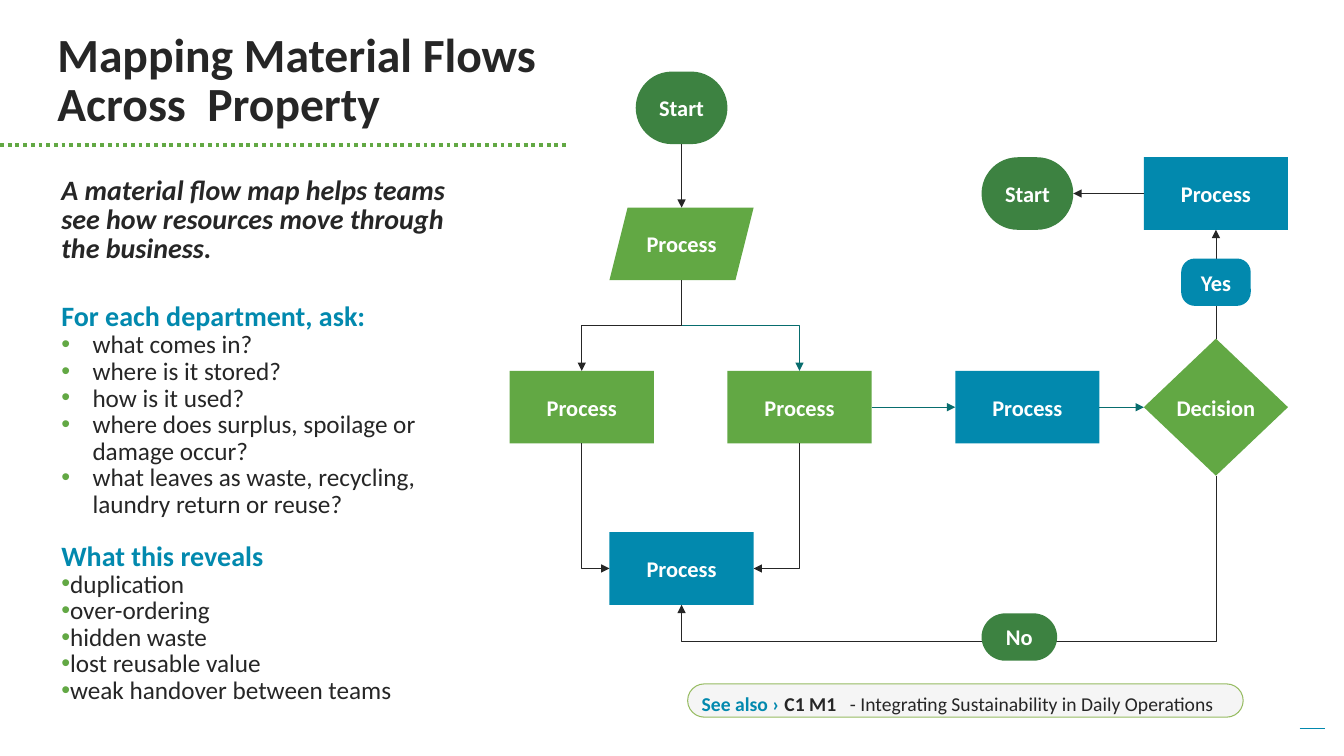
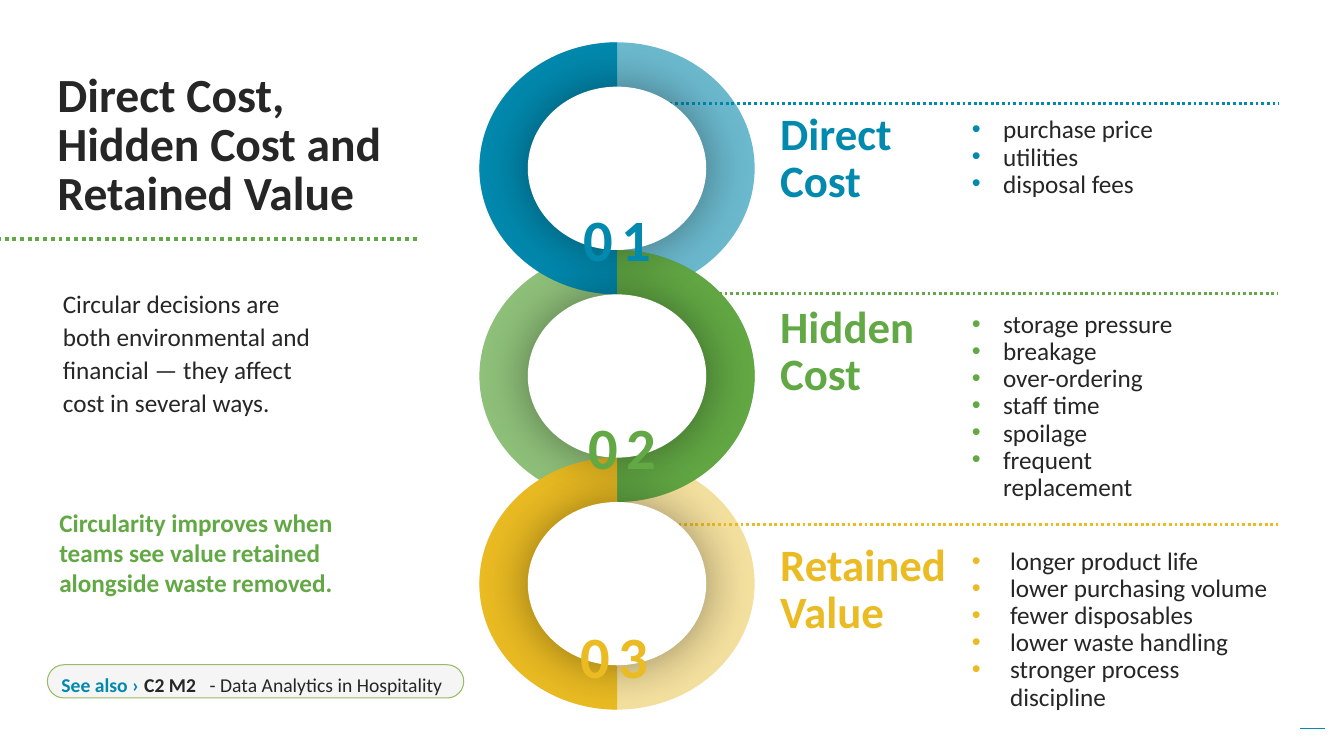
from pptx import Presentation
from pptx.dml.color import RGBColor
from pptx.enum.dml import MSO_LINE
from pptx.enum.shapes import MSO_CONNECTOR as CONN, MSO_SHAPE as SHAPE
from pptx.enum.text import MSO_ANCHOR as ANCHOR, MSO_AUTO_SIZE as AUTO, PP_ALIGN as ALIGN
from pptx.oxml.ns import qn
from pptx.util import Inches, Pt
from lxml.etree import SubElement

# Shared look
FONT = "Calibri"
INK, WHITE, BLUE, GREEN = "262626", "FFFFFF", "0289AE", "62A844"
DARK_GREEN, GOLD, TEAL = "3D8241", "EABB22", "086D6E"
PILL_FILL, PILL_LINE = "F5F5F5", "97BC62"

# Slide 1: text
FLOW_TITLE = "Mapping Material Flows Across  Property"
FLOW_INTRO = "A material flow map helps teams see how resources move through the business."
# heading, space before, heading line spacing, bullet margin, bullets
FLOW_LISTS = [
    ("For each department, ask:", 24.4, None, 0.31,
     ["what comes in?", "where is it stored?", "how is it used?",
      "where does surplus, spoilage or damage occur?",
      "what leaves as waste, recycling, laundry return or reuse?"]),
    ("What this reveals", 19, 19, 0,
     ["duplication", "over-ordering", "hidden waste", "lost reusable value",
      "weak handover between teams"]),
]

# Slide 1: flowchart columns, rows and node sizes
COL = {"left": 5.77, "stem": 6.76, "mid": 7.93, "no": 10.11, "right": 10.19, "end": 12.06}
ROW = {"start": 1.07, "finish": 1.92, "input": 2.42, "yes": 2.8, "work": 4.04,
       "merge": 5.64, "no": 6.32}
BOX, ROUND = (1.43, 0.72), (0.91, 0.72)
NO_LANE = 6.36
# name: shape, text, fill, column, row, size
NODES = {
    "start": (SHAPE.ROUNDED_RECTANGLE, "Start", DARK_GREEN, "stem", "start", ROUND),
    "decision": (SHAPE.FLOWCHART_DECISION, "Decision", GREEN, "end", "work", (1.43, 1.36)),
    "input": (SHAPE.PARALLELOGRAM, "Process", GREEN, "stem", "input", BOX),
    "left": (SHAPE.RECTANGLE, "Process", GREEN, "left", "work", BOX),
    "mid": (SHAPE.RECTANGLE, "Process", GREEN, "mid", "work", BOX),
    "merge": (SHAPE.RECTANGLE, "Process", BLUE, "stem", "merge", BOX),
    "right": (SHAPE.RECTANGLE, "Process", BLUE, "right", "work", BOX),
    "approved": (SHAPE.RECTANGLE, "Process", BLUE, "end", "finish", BOX),
    "finish": (SHAPE.ROUNDED_RECTANGLE, "Start", DARK_GREEN, "right", "finish", ROUND),
}
# from, side, to, side, colour (0 top, 1 left, 2 bottom, 3 right)
STRAIGHT = [
    ("start", 2, "input", 0, INK), ("mid", 3, "right", 1, TEAL),
    ("right", 3, "decision", 1, TEAL), ("approved", 1, "finish", 3, INK),
    ("decision", 0, "approved", 2, INK),
]
# from, to, side, colour, height of the crossing lane (None: single bend)
ELBOWS = [
    ("decision", "merge", 2, INK, NO_LANE), ("left", "merge", 1, INK, None),
    ("mid", "merge", 3, INK, None), ("input", "mid", 0, TEAL, 3.23),
    ("input", "left", 0, INK, 3.23),
]

# Slide 2: text and rings
COST_TITLE = "Direct Cost, Hidden Cost and Retained Value"
COST_INTRO = ("Circular decisions are both environmental and financial — "
              "they affect cost in several ways.")
COST_CLAIM = "Circularity improves when teams see value retained alongside waste removed."
RING_X, RING_Y, RING_STEP = 6.12, 1.67, 2.06
RING, HOLE = (2.73, 2.5), (1.77, 1.62)
ARC = 0.55  # Bezier handle length for a quarter ellipse
# heading, colour, tint %, solid side, number box, rule (x, y), heading (y, w),
# list (y, w, h), bullet margin, bullets
COSTS = [
    ("Direct Cost", BLUE, 58, -1, (5.24, 1.24, 1.76, 1.48), (6.64, 1.03), (1.06, 1.84),
     (1.11, 2.51, 1.17), 0.31, ["purchase price", "utilities", "disposal fees"]),
    ("Hidden Cost", GREEN, 71, 1, (5.29, 3.31, 1.77, 1.36), (6.74, 2.91), (2.98, 1.56),
     (3.04, 2.61, 2.23), 0.31,
     ["storage pressure", "breakage", "over-ordering", "staff time", "spoilage",
      "frequent replacement"]),
    ("Retained Value", GOLD, 43, -1, (5.24, 5.38, 1.7, 1.42), (6.45, 5.2), (5.34, 2.1),
     (5.39, 3.24, 1.97), 0.38,
     ["longer product life", "lower purchasing volume", "fewer disposables",
      "lower waste handling", "stronger process discipline"]),
]


# Helpers
def rgb(code):
    return RGBColor.from_string(code)


def add_run(p, text, size, color=INK, bold=False, italic=False):
    r = p.add_run()
    r.text = text
    f = r.font
    f.name, f.size, f.bold, f.italic = FONT, Pt(size), bold, italic
    f.color.rgb = rgb(color)
    return r


def next_paragraph(tf, spacing=None, before=0):
    p = tf.paragraphs[0]
    if p.runs:
        p = tf.add_paragraph()
    if spacing:
        p.line_spacing = spacing
    if before:
        p.space_before = Pt(before)
    return p


def add_bullets(tf, items, color, spacing, margin, hang):
    for item in items:
        p = next_paragraph(tf, Pt(spacing))
        pPr = p._p.get_or_add_pPr()
        pPr.set("marL", str(Inches(margin)))
        pPr.set("indent", str(-Inches(hang)))
        SubElement(SubElement(pPr, qn("a:buClr")), qn("a:srgbClr"), val=color)
        SubElement(pPr, qn("a:buFont"), typeface="Arial")
        SubElement(pPr, qn("a:buChar"), char="•")
        add_run(p, item, 18)


def add_box(s, x, y, w, h):
    tf = s.shapes.add_textbox(Inches(x), Inches(y), Inches(w), Inches(h)).text_frame
    tf.word_wrap = True
    return tf


def add_text(s, at, text, size, color=INK, bold=False, spacing=None):
    tf = add_box(s, *at)
    add_run(next_paragraph(tf, spacing), text, size, color, bold)
    return tf


def fill_plain(sp, color):
    sp.shadow.inherit = False
    sp.fill.solid()
    sp.fill.fore_color.rgb = rgb(color)
    sp.line.fill.background()
    return sp


def add_filled(s, kind, cx, cy, size, color):
    w, h = size
    at = (Inches(v) for v in (cx - w / 2, cy - h / 2, w, h))
    return fill_plain(s.shapes.add_shape(kind, *at), color)


def add_line(s, x1, y1, x2, y2, color, width, kind=CONN.STRAIGHT, dotted=False, arrow=False):
    c = s.shapes.add_connector(kind, Inches(x1), Inches(y1), Inches(x2), Inches(y2))
    c.line.color.rgb, c.line.width = rgb(color), Pt(width)
    if dotted:
        c.line.dash_style = MSO_LINE.ROUND_DOT
    if arrow:
        SubElement(c.line._get_or_add_ln(), qn("a:tailEnd"), type="triangle")
    SubElement(c._element.spPr, qn("a:effectLst"))
    return c


def add_slide(prs, title, at, rule):
    s = prs.slides.add_slide(prs.slide_layouts[5])
    sp = s.shapes.title
    sp.left, sp.top, sp.width, sp.height = (Inches(v) for v in at)
    tf = sp.text_frame
    tf.word_wrap, tf.auto_size, tf.vertical_anchor = True, AUTO.NONE, ANCHOR.TOP
    p = next_paragraph(tf, Pt(35.2))
    p.alignment = ALIGN.LEFT
    add_run(p, title, 34, bold=True)
    x1, x2, y = rule
    add_line(s, x1, y, x2, y, GREEN, 2.75, dotted=True)
    return s


def add_see_also(s, x, y, w, code, topic):
    pill = add_filled(s, SHAPE.ROUNDED_RECTANGLE, x + w / 2, y + 0.16, (w, 0.33), PILL_FILL)
    pill.adjustments[0] = 0.5
    pill.line.color.rgb, pill.line.width = rgb(PILL_LINE), Pt(0.75)
    parts = [(0.14, 0.83, "See also ›", BLUE, True), (0.96, 0.67, code, INK, True),
             (1.61, w - 1.62, "- " + topic, INK, False)]
    for dx, part_w, text, color, bold in parts:
        tf = add_text(s, (x + dx, y + 0.07, part_w, 0.24), text, 14, color, bold)
        tf.margin_left = tf.margin_right = tf.margin_top = tf.margin_bottom = 0
        tf.vertical_anchor = ANCHOR.MIDDLE


# Flowchart
def add_node(s, kind, text, color, col, row, size, corner=0.5):
    sp = add_filled(s, kind, COL[col], ROW[row], size, color)
    if kind == SHAPE.ROUNDED_RECTANGLE:
        sp.adjustments[0] = corner
    tf = sp.text_frame
    tf.word_wrap, tf.vertical_anchor = False, ANCHOR.MIDDLE
    p = tf.paragraphs[0]
    p.alignment = ALIGN.CENTER
    add_run(p, text, 16, WHITE, True)
    return sp


def side_point(name, side):
    _, _, _, col, row, (w, h) = NODES[name]
    dx, dy = [(0, -1), (-1, 0), (0, 1), (1, 0)][side]
    return COL[col] + dx * w / 2, ROW[row] + dy * h / 2


def add_elbow(s, start, end, color, lane):
    """Elbow that leaves downwards: a horizontal one turned by a quarter."""
    (x1, y1), (x2, y2) = start, end
    cx, cy, w, h = (x1 + x2) / 2, (y1 + y2) / 2, y2 - y1, abs(x2 - x1)
    c = add_line(s, cx - w / 2, cy - h / 2, cx + w / 2, cy + h / 2, color, 0.5,
                 CONN.ELBOW, arrow=True)
    xfrm, geom = c._element.spPr.find(qn("a:xfrm")), c._element.spPr.find(qn("a:prstGeom"))
    xfrm.set("rot", str((270 if x2 > x1 else 90) * 60000))
    if x2 > x1:
        xfrm.set("flipH", "1")
    if lane is None:
        geom.set("prst", "bentConnector2")
    else:
        share = round((lane - y1) / w * 100000)
        SubElement(geom.find(qn("a:avLst")), qn("a:gd"), name="adj1", fmla=f"val {share}")


def build_flow(prs):
    s = add_slide(prs, FLOW_TITLE, (0.47, 0.27, 6.2, 1.22), (0, 5.62, 1.44))
    nodes = {name: add_node(s, *node) for name, node in NODES.items()}
    for a, b, side, color, lane in ELBOWS:
        add_elbow(s, side_point(a, 2), side_point(b, side), color, lane)
    for a, a_side, b, b_side, color in STRAIGHT:
        c = add_line(s, *side_point(a, a_side), *side_point(b, b_side), color, 0.5, arrow=True)
        c.begin_connect(nodes[a], a_side)
        if b != "input":
            c.end_connect(nodes[b], b_side)
    add_node(s, SHAPE.ROUNDED_RECTANGLE, "No", DARK_GREEN, "no", "no", (0.75, 0.47))
    add_node(s, SHAPE.ROUNDED_RECTANGLE, "Yes", BLUE, "end", "yes", (0.69, 0.47), 0.29)

    # Questions on the left
    tf = add_box(s, 0.51, 1.7, 4.2, 5.51)
    add_run(next_paragraph(tf, Pt(21)), FLOW_INTRO, 20, bold=True, italic=True)
    for heading, before, spacing, margin, items in FLOW_LISTS:
        p = next_paragraph(tf, Pt(spacing) if spacing else None, before)
        add_run(p, heading, 20, BLUE, True)
        add_bullets(tf, items, GREEN, 19, margin, 0.31)
    add_see_also(s, 6.82, 6.79, 5.51, "C1 M1", "Integrating Sustainability in Daily Operations")
    return s


# Rings
def add_half_ring(s, cy, side, color):
    w, h = RING[0] / 2, RING[1] / 2
    top, outer, bottom = [(Inches(RING_X + dx * side * w), Inches(cy + dy * h))
                          for dx, dy in ((0, -1), (1, 0), (0, 1))]
    fb = s.shapes.build_freeform(*top)
    fb.add_line_segments([outer, bottom])
    sp = fill_plain(fb.convert_to_shape(), color)
    # Bend both straight segments into quarter ellipses
    left, up = min(top[0], outer[0]), top[1]
    reach_x, reach_y = (outer[0] - top[0]) * ARC, (outer[1] - top[1]) * ARC
    curves = [((top[0] + reach_x, top[1]), (outer[0], outer[1] - reach_y), outer),
              ((outer[0], outer[1] + reach_y), (bottom[0] + reach_x, bottom[1]), bottom)]
    for seg, points in zip(list(sp._element.iter(qn("a:lnTo"))), curves):
        seg.tag = qn("a:cubicBezTo")
        seg.remove(seg[0])
        for x, y in points:
            SubElement(seg, qn("a:pt"), x=str(round(x - left)), y=str(round(y - up)))


def add_hole(s, cy):
    sp = add_filled(s, SHAPE.OVAL, RING_X, cy, HOLE, WHITE)
    effects = sp._element.spPr.find(qn("a:effectLst"))
    glow = SubElement(effects, qn("a:outerShdw"), blurRad=str(Pt(37)), algn="ctr", rotWithShape="0")
    black = SubElement(glow, qn("a:srgbClr"), val="000000")
    SubElement(black, qn("a:alpha"), val="40000")


def build_costs(prs):
    s = add_slide(prs, COST_TITLE, (0.47, 0.67, 3.58, 1.22), (-0.03, 4.17, 2.37))
    centres = [RING_Y + i * RING_STEP for i in range(len(COSTS))]
    # Tinted discs, then solid halves and holes
    for i in (1, 2, 0):
        _, color, tint, _, _, (x, y), *_ = COSTS[i]
        disc = add_filled(s, SHAPE.OVAL, RING_X, centres[i], RING, color)
        clr = disc._element.spPr.find(qn("a:solidFill")).find(qn("a:srgbClr"))
        SubElement(clr, qn("a:alpha"), val=str(tint * 1000))
        add_line(s, x, y, 12.68, y, color, 2, dotted=True)
    for cy, cost in zip(centres, COSTS):
        add_half_ring(s, cy, cost[3], cost[1])
    for i in (0, 2, 1):
        add_hole(s, centres[i])

    # Numbers, headings and lists
    for i, (name, color, _, _, num_at, _, head, box, margin, items) in enumerate(COSTS, 1):
        tf = add_text(s, num_at, f"0{i}", 72, color, True, 1.5)
        p = tf.paragraphs[0]
        p.alignment = ALIGN.CENTER
        rPr = p.runs[0].font._element
        rPr.set("baseline", "30000")
        rPr.set("spc", "600")
        add_text(s, (7.64, *head, 1.05), name, 32, color, True, Pt(33.8))
        add_bullets(add_box(s, 9.54, *box), items, color, 19.4, margin, margin)

    # Message panel and claim
    panel = add_filled(s, SHAPE.RECTANGLE, 1.95, 3.63, (2.85, 1.68), WHITE).text_frame
    panel.word_wrap, panel.vertical_anchor = True, ANCHOR.TOP
    p = next_paragraph(panel, Pt(23.4))
    p.alignment = ALIGN.LEFT
    add_run(p, COST_INTRO, 18)
    add_text(s, (0.49, 4.98, 3.33, 1.01), COST_CLAIM, 18, GREEN, True)
    add_see_also(s, 0.47, 6.6, 4.13, "C2 M2", "Data Analytics in Hospitality")


def main():
    prs = Presentation()
    prs.slide_width, prs.slide_height = Inches(13.33), Inches(7.5)
    s = build_flow(prs)
    # Corner mark, kept on the layout for both slides
    mark = add_line(s, 12.89, 7.23, 13.14, 7.23, BLUE, 0.75)._element
    mark.nvCxnSpPr.cNvPr.set("id", "50")
    prs.slide_layouts[5].shapes._spTree.append(mark)
    build_costs(prs)
    prs.save("out.pptx")


if __name__ == "__main__":
    main()
